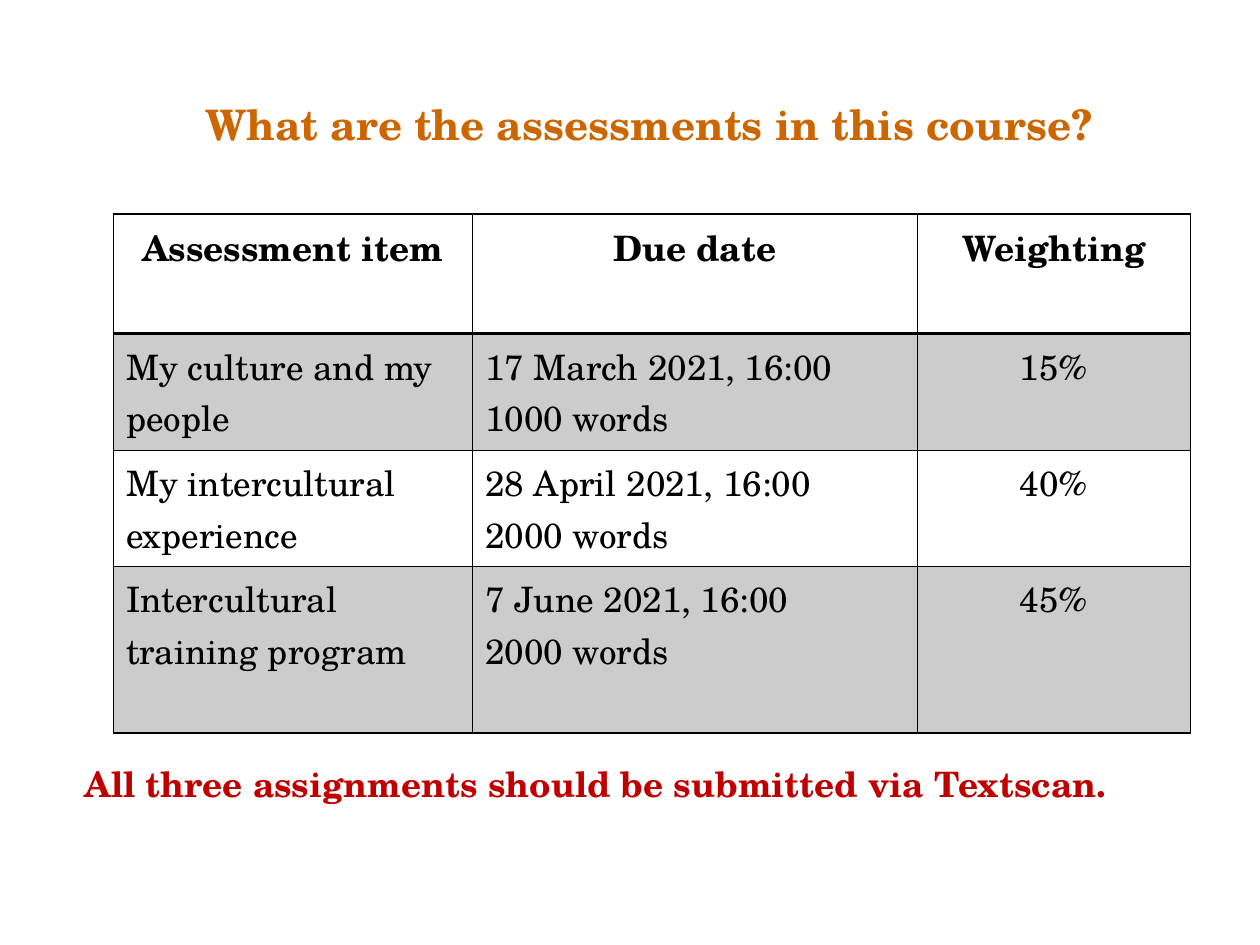
import pptx
import pptx.dml.color
import pptx.enum.text
import pptx.util
from dataclasses import dataclass
from lxml import etree
from pptx.oxml.ns import qn

Pt = pptx.util.Pt
ALIGN = pptx.enum.text.PP_ALIGN
ANCHOR = pptx.enum.text.MSO_ANCHOR


@dataclass(frozen=True)
class Theme:
    """Colours, font and type sizes of the slide."""
    font: str = "TeX Gyre Schola"
    title: str = "CC6600"
    ink: str = "000000"
    note: str = "C00000"
    title_size: int = 24
    body_size: int = 20
    band_opacity: int = 20


THEME = Theme()
COL_WIDTHS = (205.2, 254.2, 156.2)
ROW_HEIGHTS = (68.4, 66.6, 66.4, 95.2)
ROWS = (
    ("Assessment item", "Due date", "Weighting"),
    ("My culture and my people", "17 March 2021, 16:00\n1000 words", "15%"),
    ("My intercultural experience", "28 April 2021, 16:00\n2000 words", "40%"),
    ("Intercultural training program", "7 June 2021, 16:00\n2000 words", "45%"),
)


def write(tf, text, size=THEME.body_size, color=THEME.ink, bold=False, align=ALIGN.LEFT):
    """Fill a text frame with one paragraph per line of text."""
    for i, line in enumerate(text.split("\n")):
        p = tf.add_paragraph() if i else tf.paragraphs[0]
        p.alignment = align
        r = p.add_run()
        r.text = line
        r.font.name = THEME.font
        r.font.size = Pt(size)
        r.font.bold = bold
        r.font.color.rgb = pptx.dml.color.RGBColor.from_string(color)


def add_text(s, text, box, anchor, wrap=True, **fmt):
    """Add a centred text box."""
    tf = s.shapes.add_textbox(*map(Pt, box)).text_frame
    tf.word_wrap = wrap
    tf.vertical_anchor = anchor
    write(tf, text, align=ALIGN.CENTER, **fmt)


def set_borders(cell, **widths):
    """Draw solid cell borders, with widths in points keyed by side."""
    tcPr = cell._tc.get_or_add_tcPr()
    for side, width in widths.items():
        ln = etree.SubElement(tcPr, qn(f"a:ln{side}"), w=str(Pt(width)))
        fill = etree.SubElement(ln, qn("a:solidFill"))
        etree.SubElement(fill, qn("a:srgbClr"), val=THEME.ink)


def set_band(cell, shaded):
    """Shade a cell with translucent ink or leave it clear."""
    if not shaded:
        cell.fill.background()
        return
    cell.fill.solid()
    cell.fill.fore_color.rgb = pptx.dml.color.RGBColor.from_string(THEME.ink)
    clr = cell._tc.tcPr.find(qn("a:solidFill")).find(qn("a:srgbClr"))
    etree.SubElement(clr, qn("a:alpha"), val=str(THEME.band_opacity * 1000))


def add_assessments(s, left, top):
    """Add the assessment table."""
    size = (sum(COL_WIDTHS), sum(ROW_HEIGHTS))
    table = s.shapes.add_table(len(ROWS), len(COL_WIDTHS),
                               *map(Pt, (left, top, *size))).table
    table.horz_banding = False
    for col, width in zip(table.columns, COL_WIDTHS):
        col.width = Pt(width)
    for i, values in enumerate(ROWS):
        table.rows[i].height = Pt(ROW_HEIGHTS[i])
        for j, text in enumerate(values):
            cell = table.cell(i, j)
            centred = i == 0 or j == len(values) - 1
            write(cell.text_frame, text, bold=i == 0,
                  align=ALIGN.CENTER if centred else ALIGN.LEFT)
            set_borders(cell, L=1, R=1, T=2 if i == 1 else 1, B=2 if i == 0 else 1)
            set_band(cell, i % 2 == 1)


def main():
    """Build and save the slide."""
    prs = pptx.Presentation()
    prs.slide_width, prs.slide_height = Pt(720), Pt(540)
    s = prs.slides.add_slide(prs.slide_layouts[6])
    add_text(s, "What are the assessments in this course? ", (70.6, 20.9, 607, 67.7),
             ANCHOR.BOTTOM, size=THEME.title_size, color=THEME.title, bold=True)
    add_assessments(s, 64.8, 122.4)
    add_text(s, "All three assignments should be submitted via Textscan.",
             (40.3, 432, 600.5, 31.7), ANCHOR.MIDDLE, wrap=False,
             color=THEME.note, bold=True)
    prs.save("out.pptx")


if __name__ == "__main__":
    main()
